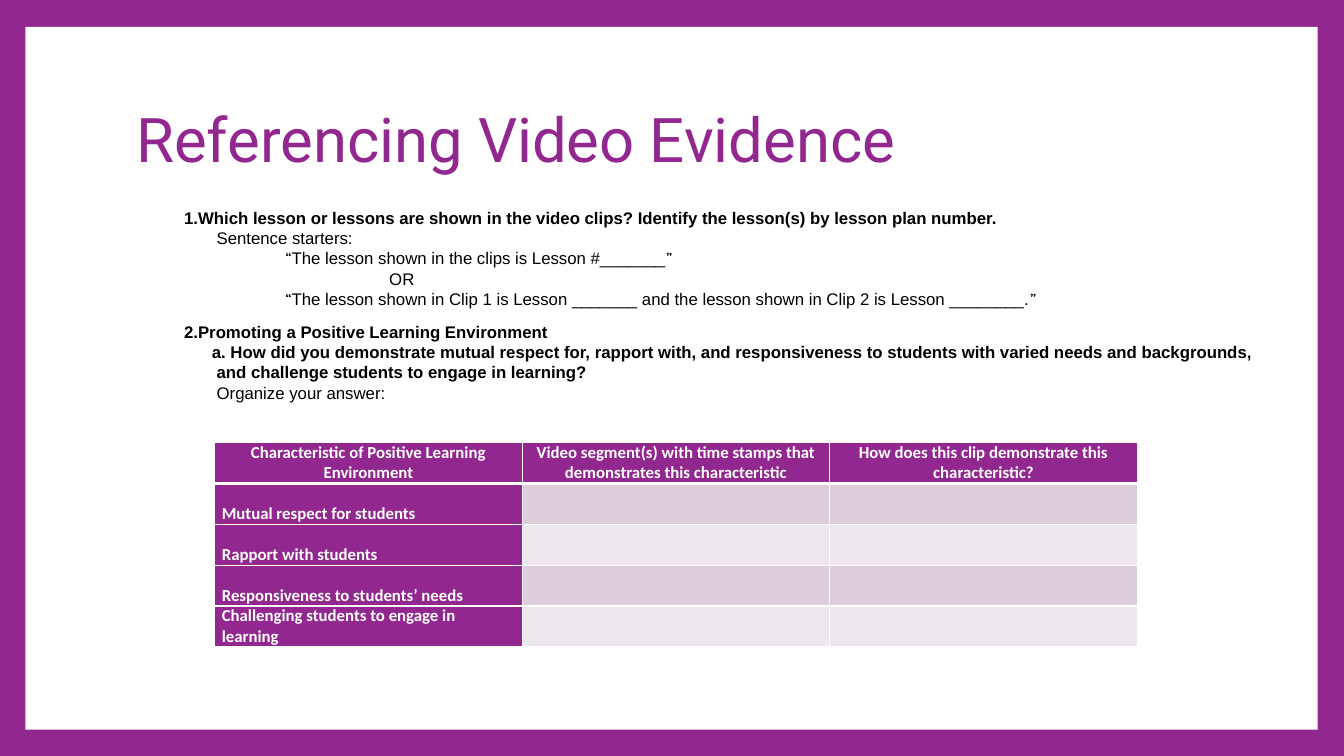
import pptx
import pptx.dml.color
import pptx.enum.shapes
import pptx.enum.text
import pptx.oxml.ns
import pptx.util
import lxml.etree

Cm, Pt = pptx.util.Cm, pptx.util.Pt
ANCHOR, ALIGN = pptx.enum.text.MSO_ANCHOR, pptx.enum.text.PP_ALIGN
PURPLE, WHITE, BLACK = "92278F", "FFFFFF", "000000"
BANDS = ["DCCDDB", "EEE8EE"]


def color(hex_string):
    return pptx.dml.color.RGBColor.from_string(hex_string)


def add_border(cell, side, points):
    """Draw a white border on one side (L, R, T or B); call before filling the cell."""
    qn = pptx.oxml.ns.qn
    properties = cell._tc.get_or_add_tcPr()
    line = lxml.etree.SubElement(properties, qn(f"a:ln{side}"), w=str(Pt(points)))
    fill = lxml.etree.SubElement(line, qn("a:solidFill"))
    lxml.etree.SubElement(fill, qn("a:srgbClr"), val=WHITE)


deck = pptx.Presentation()
deck.slide_width, deck.slide_height = Cm(33.87), Cm(19.05)
slide = deck.slides.add_slide(deck.slide_layouts[5])
slide.background.fill.solid()
slide.background.fill.fore_color.rgb = color(PURPLE)

# White panel behind everything
panel = slide.shapes.add_shape(
    pptx.enum.shapes.MSO_SHAPE.RECTANGLE, Cm(0.64), Cm(0.68), Cm(32.57), Cm(17.71))
panel.shadow.inherit = False
panel.fill.solid()
panel.fill.fore_color.rgb = color(WHITE)
panel.line.fill.background()
slide.shapes._spTree.insert(2, panel._element)

# Title
title = slide.shapes.title
title.left, title.top, title.width, title.height = Cm(3.18), Cm(1.7), Cm(27.43), Cm(3.76)
title.text_frame.text = "Referencing Video Evidence"
title.text_frame.vertical_anchor = ANCHOR.MIDDLE
title.text_frame.word_wrap = True
para = title.text_frame.paragraphs[0]
para.alignment = ALIGN.LEFT
para.line_spacing = 0.9
para.font.name, para.font.size = "Roboto", Pt(44)
para.font.color.rgb = color(PURPLE)

# Questions: text, bold, left margin and first-line indent in cm, space before in points
questions = [
    ("1.Which lesson or lessons are shown in the video clips? "
     "Identify the lesson(s) by lesson plan number.", True, 0, 0, 0),
    ("Sentence starters:", False, 0.82, 0, 0),
    ("“The lesson shown in the clips is Lesson #_______”", False, 2.55, 0, 0),
    ("OR", False, 5.17, 0, 0),
    ("“The lesson shown in Clip 1 is Lesson _______ and the lesson shown in "
     "Clip 2 is Lesson ________.”", False, 2.55, 0, 0),
    ("2.Promoting a Positive Learning Environment", True, 0, 0, 9),
    ("a. How did you demonstrate mutual respect for, rapport with, and responsiveness "
     "to students with varied needs and backgrounds,\v"
     "and challenge students to engage in learning?", True, 0.82, -0.12, 0),
    ("Organize your answer:", False, 0.82, 0, 0),
]
box = slide.shapes.add_textbox(Cm(4.39), Cm(5.08), Cm(27.76), Cm(5.21))
frame = box.text_frame
frame.word_wrap = True
frame.vertical_anchor = ANCHOR.MIDDLE
for index, (text, bold, margin, indent, space) in enumerate(questions):
    para = frame.add_paragraph() if index else frame.paragraphs[0]
    para._p.get_or_add_pPr().set("marL", str(Cm(margin)))
    para._p.get_or_add_pPr().set("indent", str(Cm(indent)))
    para.line_spacing = Pt(14.5)
    para.space_before = Pt(space)
    para.font.size, para.font.bold = Pt(12), bold
    para.font.color.rgb = color(BLACK)
    if text.startswith("“"):
        for part, font_name in (("“", "Cambria"), (text[1:-1], "Arial"), ("”", "Cambria")):
            span = para.add_run()
            span.text = part
            span.font.name = font_name
    else:
        para.font.name = "Arial"
        para.text = text

# Table of characteristics
rows = [
    ["Characteristic of Positive Learning Environment",
     "Video segment(s) with time stamps that demonstrates this characteristic",
     "How does this clip demonstrate this characteristic?"],
    ["Mutual respect for students", "", ""],
    ["Rapport with students", "", ""],
    ["Responsiveness to students’ needs", "", ""],
    ["Challenging students to engage in learning", "", ""],
]
table = slide.shapes.add_table(
    len(rows), 3, Cm(5.41), Cm(11.15), Cm(23.25), Cm(5.15)).table
for column in table.columns:
    column.width = Cm(7.75)
for row_index, texts in enumerate(rows):
    table.rows[row_index].height = Cm(1.03)
    for column_index, text in enumerate(texts):
        cell = table.cell(row_index, column_index)
        cell.margin_left = cell.margin_right = Cm(0.18)
        cell.margin_top = cell.margin_bottom = 0
        header = row_index == 0
        cell.vertical_anchor = ANCHOR.TOP if header else ANCHOR.BOTTOM
        for side in "LRTB":
            thick = (header and side == "B") or (row_index == 1 and side == "T")
            add_border(cell, side, 3 if thick else 1)
        label = header or column_index == 0
        cell.fill.solid()
        cell.fill.fore_color.rgb = color(PURPLE if label else BANDS[(row_index - 1) % 2])
        para = cell.text_frame.paragraphs[0]
        para.text = text
        para.alignment = ALIGN.CENTER if header else ALIGN.LEFT
        para.font.name, para.font.size, para.font.bold = "Calibri", Pt(12), True
        para.font.color.rgb = color(WHITE)

deck.save("out.pptx")
